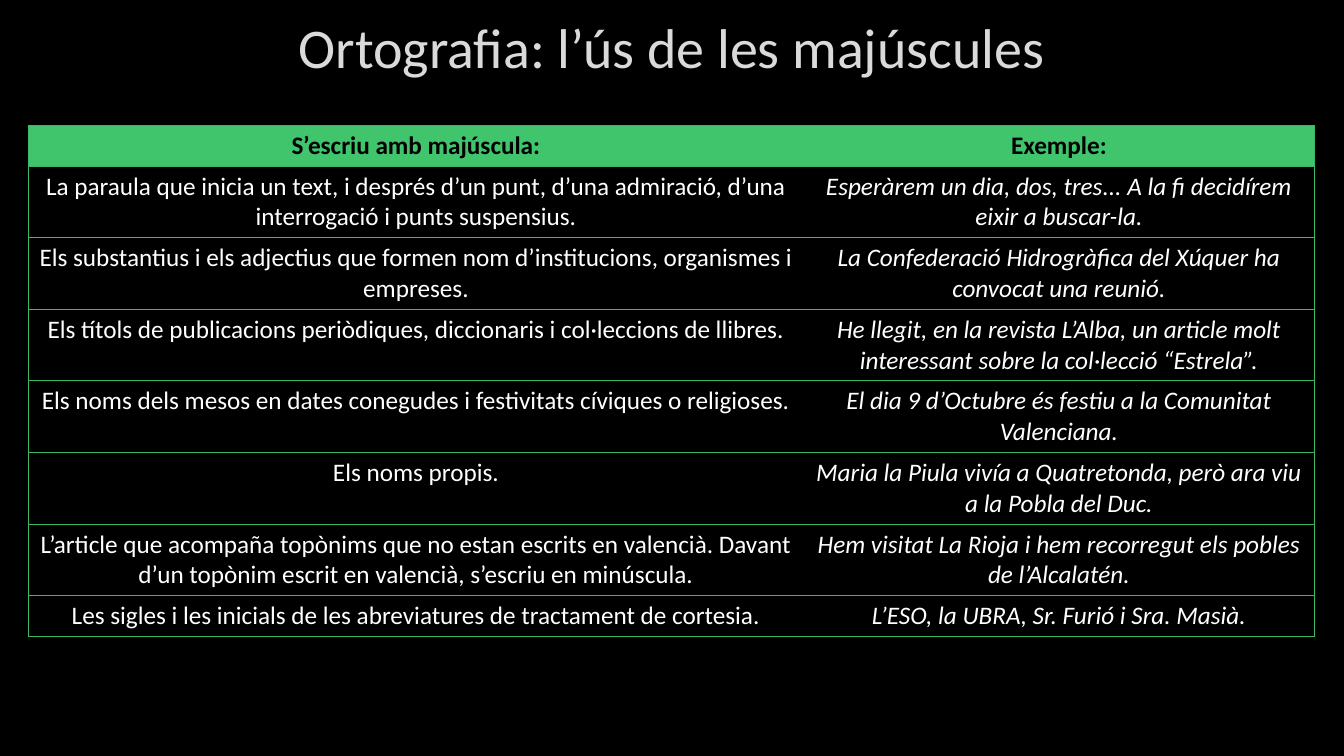
from dataclasses import dataclass

from lxml.etree import SubElement
from pptx import Presentation
from pptx.dml.color import RGBColor
from pptx.enum.text import MSO_ANCHOR, PP_ALIGN
from pptx.oxml.ns import qn
from pptx.util import Pt

TITLE = "Ortografia: l’ús de les majúscules"
HEADINGS = ("S’escriu amb majúscula:", "Exemple:")
RULES = [
    ("La paraula que inicia un text, i després d’un punt, d’una admiració, d’una interrogació i punts suspensius.",
     "Esperàrem un dia, dos, tres... A la fi decidírem eixir a buscar-la."),
    ("Els substantius i els adjectius que formen nom d’institucions, organismes i empreses.",
     "La Confederació Hidrogràfica del Xúquer ha convocat una reunió."),
    ("Els títols de publicacions periòdiques, diccionaris i col·leccions de llibres.",
     "He llegit, en la revista L’Alba, un article molt interessant sobre la col·lecció “Estrela”."),
    ("Els noms dels mesos en dates conegudes i festivitats cíviques o religioses.",
     "El dia 9 d’Octubre és festiu a la Comunitat Valenciana."),
    ("Els noms propis.",
     "Maria la Piula vivía a Quatretonda, però ara viu a la Pobla del Duc."),
    ("L’article que acompaña topònims que no estan escrits en valencià. Davant d’un topònim escrit en valencià, s’escriu en minúscula.",
     "Hem visitat La Rioja i hem recorregut els pobles de l’Alcalatén."),
    ("Les sigles i les inicials de les abreviatures de tractament de cortesia.",
     "L’ESO, la UBRA, Sr. Furió i Sra. Masià."),
]


@dataclass(frozen=True)
class Theme:
    font: str = "Calibri"
    background: str = "000000"
    title: str = "DADADA"
    heading: str = "000000"
    body: str = "FFFFFF"
    header_fill: str = "40C46C"
    border: str = "3BB967"
    title_size: int = 40
    body_size: int = 18
    border_width: float = 0.75


THEME = Theme()
SLIDE_WIDTH, SLIDE_HEIGHT = 1344, 756
TITLE_BOX = (101, -7, 1141, 107)
TABLE_LEFT, TABLE_TOP = 28, 125
COLUMN_WIDTHS = (776, 510)
ONE_LINE, TWO_LINES = 41, 71
ROW_HEIGHTS = [ONE_LINE] + [TWO_LINES] * (len(RULES) - 1) + [ONE_LINE]


def px(length):
    return round(length * 914400 / 100.8)


def style(paragraph, size, color, bold=False, italic=False):
    paragraph.alignment = PP_ALIGN.CENTER
    font = paragraph.font
    font.name, font.size = THEME.font, Pt(size)
    font.bold, font.italic = bold, italic
    font.color.rgb = RGBColor.from_string(color)


def set_borders(cell, visible_sides):
    properties = cell._tc.get_or_add_tcPr()
    for position, side in enumerate("LRTB"):
        line = SubElement(properties, qn(f"a:ln{side}"), w=str(Pt(THEME.border_width)))
        if side in visible_sides:
            fill = SubElement(line, qn("a:solidFill"))
            SubElement(fill, qn("a:srgbClr"), val=THEME.border)
        else:
            SubElement(line, qn("a:noFill"))
        properties.insert(position, line)


def add_title(slide):
    title = slide.shapes.title
    title.left, title.top, title.width, title.height = map(px, TITLE_BOX)
    title.text_frame.text = TITLE
    title.text_frame.vertical_anchor = MSO_ANCHOR.MIDDLE
    style(title.text_frame.paragraphs[0], THEME.title_size, THEME.title)


def add_rules(slide):
    rows = [HEADINGS, *RULES]
    table = slide.shapes.add_table(
        len(rows), len(HEADINGS), px(TABLE_LEFT), px(TABLE_TOP),
        px(sum(COLUMN_WIDTHS)), px(sum(ROW_HEIGHTS))).table
    table.horz_banding = False
    for column, width in zip(table.columns, COLUMN_WIDTHS):
        column.width = px(width)
    for row, height in zip(table.rows, ROW_HEIGHTS):
        row.height = px(height)
    for row_index, texts in enumerate(rows):
        is_header = row_index == 0
        for column_index, text in enumerate(texts):
            cell = table.cell(row_index, column_index)
            cell.text = text
            style(cell.text_frame.paragraphs[0], THEME.body_size,
                  THEME.heading if is_header else THEME.body,
                  bold=is_header, italic=column_index == 1 and not is_header)
            if is_header:
                cell.fill.solid()
                cell.fill.fore_color.rgb = RGBColor.from_string(THEME.header_fill)
            else:
                cell.fill.background()
            set_borders(cell, "LR"[column_index] + "TB")


def main():
    presentation = Presentation()
    presentation.slide_width = px(SLIDE_WIDTH)
    presentation.slide_height = px(SLIDE_HEIGHT)
    slide = presentation.slides.add_slide(presentation.slide_layouts[5])
    slide.background.fill.solid()
    slide.background.fill.fore_color.rgb = RGBColor.from_string(THEME.background)
    add_title(slide)
    add_rules(slide)
    presentation.save("out.pptx")


if __name__ == "__main__":
    main()
